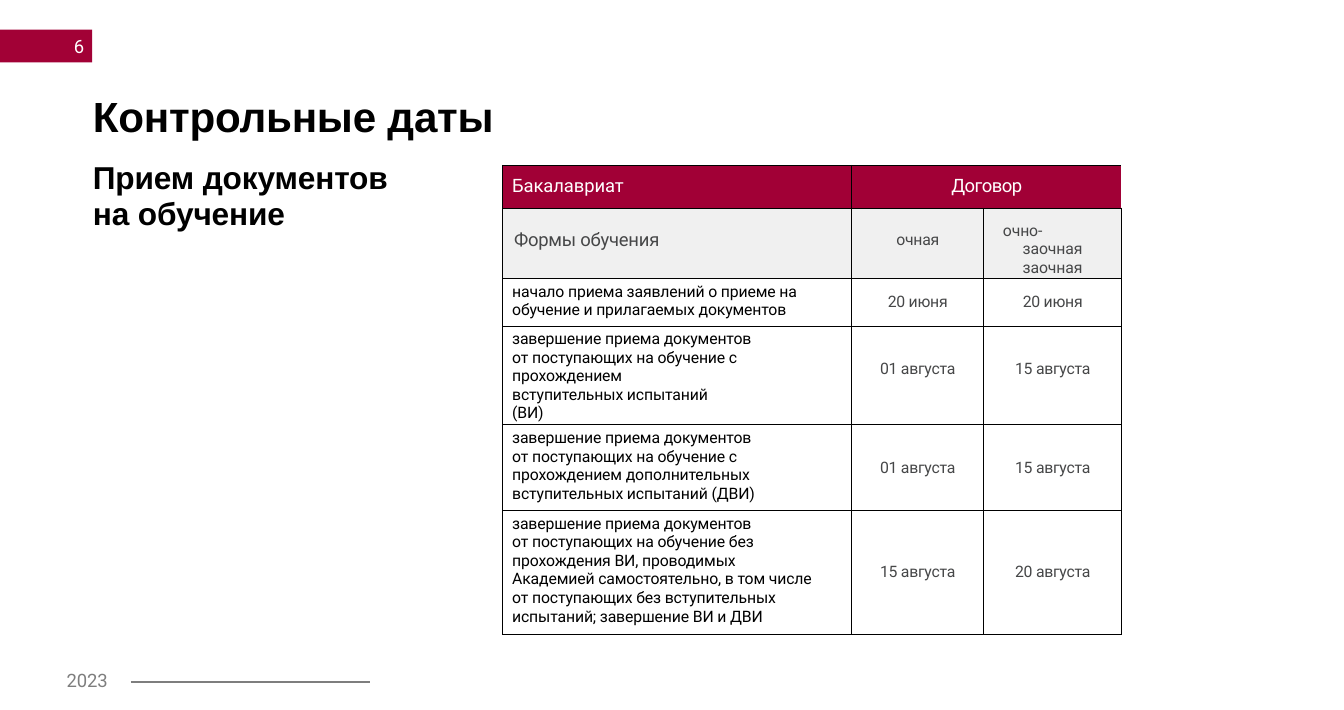
from lxml import etree
from pptx import Presentation
from pptx import util as u
from pptx.dml.color import RGBColor
from pptx.enum import shapes, text
from pptx.oxml.ns import qn

HUES = {"red": "A20136", "head": "A10036", "gray": "7E7E7E", "dark": "464748",
        "pale": "F0F0F0", "black": "000000", "white": "FFFFFF"}
LEFT, MID = text.PP_ALIGN.LEFT, text.PP_ALIGN.CENTER
TOP, HALF = text.MSO_ANCHOR.TOP, text.MSO_ANCHOR.MIDDLE


def rgb(name):
    return RGBColor.from_string(HUES[name])


class Deck:
    def __init__(self, wide, high):
        self.file = Presentation()
        self.file.slide_width, self.file.slide_height = u.Pt(wide), u.Pt(high)
        self.page = self.file.slides.add_slide(self.file.slide_layouts[6])

    def bar(self, x, y, w, h, hue):
        bar = self.page.shapes.add_shape(
            shapes.MSO_SHAPE.RECTANGLE, u.Pt(x), u.Pt(y), u.Pt(w), u.Pt(h))
        bar.shadow.inherit = False
        bar.fill.solid()
        bar.fill.fore_color.rgb = rgb(hue)
        bar.line.fill.background()

    def rule(self, x, y, end, hue, width):
        rule = self.page.shapes.add_connector(
            shapes.MSO_CONNECTOR.STRAIGHT, u.Pt(x), u.Pt(y), u.Pt(end), u.Pt(y))
        rule.line.color.rgb = rgb(hue)
        rule.line.width = u.Pt(width)
        etree.SubElement(rule._element.spPr, qn("a:effectLst"))

    def words(self, frame, paras, size, hue, face="Roboto", bold=False,
              align=LEFT, lead=None, track=-0.1):
        for n, lines in enumerate(paras):
            para = frame.paragraphs[0] if n == 0 else frame.add_paragraph()
            para.alignment = align
            if lead:
                para.line_spacing = u.Pt(lead)
            for k, line in enumerate(lines.split("\n")):
                if k:
                    para.add_line_break()
                run = para.add_run()
                run.text = line
                font = run.font
                font.size, font.name, font.bold = u.Pt(size), face, bold
                font.color.rgb = rgb(hue)
                run._r.get_or_add_rPr().set("spc", str(round(track * 100)))

    def label(self, x, y, w, h, paras, size, hue, **style):
        frame = self.page.shapes.add_textbox(
            u.Pt(x), u.Pt(y), u.Pt(w), u.Pt(h)).text_frame
        frame.word_wrap = True
        frame.margin_left = frame.margin_right = 0
        frame.margin_top = frame.margin_bottom = 0
        self.words(frame, paras, size, hue, **style)

    def grid(self, x, y, cols, rows):
        grid = self.page.shapes.add_table(
            len(rows), len(cols), u.Pt(x), u.Pt(y),
            u.Pt(sum(cols)), u.Pt(sum(rows))).table
        grid.first_row = grid.horz_banding = False
        for col, w in zip(grid.columns, cols):
            col.width = u.Pt(w)
        for row, h in zip(grid.rows, rows):
            row.height = u.Pt(h)
        return grid

    def edge(self, cell, sides):
        props = cell._tc.get_or_add_tcPr()
        for n, side in enumerate(sides):
            line = etree.Element(qn("a:ln" + side), w=str(u.Pt(1)))
            fill = etree.SubElement(line, qn("a:solidFill"))
            etree.SubElement(fill, qn("a:srgbClr"), val=HUES["black"])
            props.insert(n, line)

    def cell(self, cell, paras, size, hue, fill=None, sides="LRTB",
             left=0, top=0, low=0, anchor=HALF, **style):
        cell.margin_left, cell.margin_right = u.Pt(left), 0
        cell.margin_top, cell.margin_bottom = u.Pt(top), u.Pt(low)
        cell.vertical_anchor = anchor
        if fill:
            cell.fill.solid()
            cell.fill.fore_color.rgb = rgb(fill)
        else:
            cell.fill.background()
        self.edge(cell, sides)
        self.words(cell.text_frame, paras, size, hue, **style)


DATES = [
    (["начало приема заявлений о приеме на",
      "обучение и прилагаемых документов"], "20 июня", "20 июня", 1),
    (["завершение приема документов\nот поступающих на обучение с",
      "прохождением\nвступительных испытаний\n(ВИ)"],
     "01 августа", "15 августа", 10),
    (["завершение приема документов\nот поступающих на обучение с\n"
      "прохождением дополнительных\nвступительных испытаний (ДВИ)"],
     "01 августа", "15 августа", 0),
    (["завершение приема документов\nот поступающих на обучение без",
      "прохождения ВИ, проводимых",
      "Академией самостоятельно, в том числе\n"
      "от поступающих без вступительных\n"
      "испытаний; завершение ВИ и ДВИ"], "15 августа", "20 августа", 1),
]


def main():
    deck = Deck(1020.24, 539.28)
    deck.bar(0, 22.5, 70, 25, "red")
    deck.rule(99.4, 517.7, 280.8, "gray", 1.56)
    deck.label(70.5, 68.5, 320, 40, ["Контрольные даты"], 32, "black",
               face="Arial", bold=True, track=-0.2)
    deck.label(50.5, 508.5, 40, 18, ["2023"], 14, "gray", lead=16.5)
    deck.label(56, 26.5, 12, 18, ["6"], 14, "white", track=0)
    deck.label(70.5, 121, 264, 60, ["Прием документов", "на обучение"], 24,
               "black", face="Arial", bold=True, lead=27.4)

    grid = deck.grid(381.6, 125.6, [265, 100.3, 104.7],
                     [32.6, 53.2, 36.2, 74.4, 65.3, 94.1])
    grid.cell(0, 1).merge(grid.cell(0, 2))
    deck.cell(grid.cell(0, 0), ["Бакалавриат"], 14, "white", fill="head",
              left=7.2, top=7.2, anchor=TOP)
    deck.cell(grid.cell(0, 1), ["Договор"], 14, "white", fill="head",
              sides="LTB", top=7.2, anchor=TOP, align=MID, track=-0.4)
    deck.edge(grid.cell(0, 2), "TB")

    deck.cell(grid.cell(1, 0), ["Формы обучения"], 14, "dark", fill="pale",
              left=8.6, low=4.6, track=-0.2)
    deck.cell(grid.cell(1, 1), ["очная"], 12, "dark", fill="pale",
              low=4.6, align=MID, track=-0.2)
    mixed = grid.cell(1, 2)
    deck.cell(mixed, ["очно-\nзаочная\nзаочная"], 12, "dark", fill="pale",
              top=10.1, anchor=TOP)
    props = mixed.text_frame.paragraphs[0]._p.get_or_add_pPr()
    props.set("marL", str(u.Pt(29.5)))
    props.set("indent", str(u.Pt(-15)))

    for n, (stage, day, part, low) in enumerate(DATES, 2):
        deck.cell(grid.cell(n, 0), stage, 12, "black", left=7.2, top=3,
                  anchor=TOP)
        for col, date in enumerate((day, part), 1):
            deck.cell(grid.cell(n, col), [date], 12, "dark", low=low,
                      align=MID, track=-0.2)
    deck.file.save("out.pptx")


if __name__ == "__main__":
    main()
